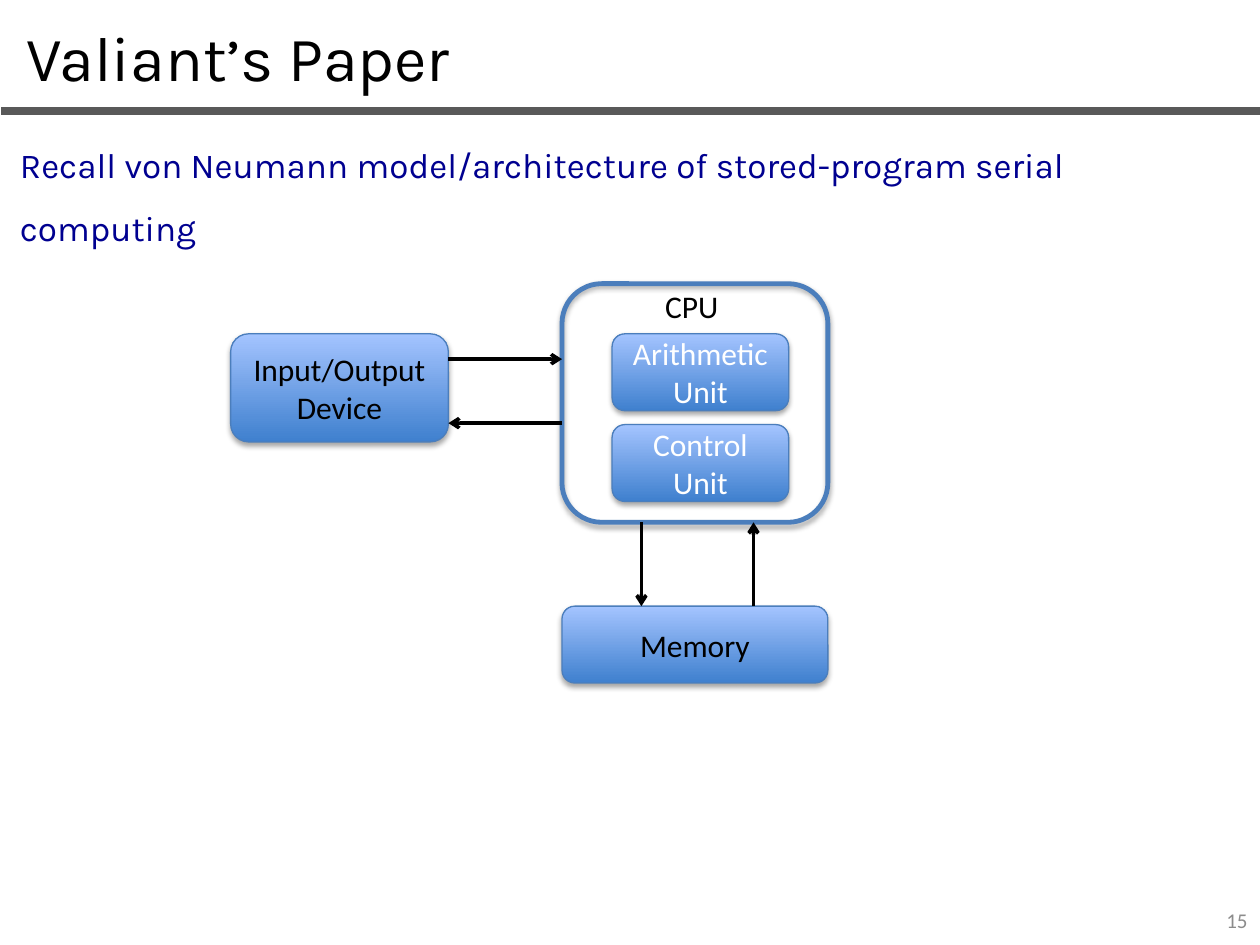
from pptx import Presentation
from pptx.dml.color import RGBColor
from pptx.enum.shapes import MSO_CONNECTOR, MSO_SHAPE
from pptx.enum.text import MSO_ANCHOR, PP_ALIGN
from pptx.oxml.ns import qn
from pptx.util import Cm, Pt
from lxml.etree import SubElement

COLORS = {
    "text": "000000",
    "light_text": "FFFFFF",
    "statement": "000090",
    "page_number": "8C8C8C",
    "rule": "595959",
    "outline": "4B7EBC",
    "gradient_bottom": "3F80CE",
    "gradient_top": "A4C4FF",
}


def color(name):
    return RGBColor.from_string(COLORS[name])


def write(text_frame, text, size, color_name, font="Calibri", align=PP_ALIGN.LEFT):
    text_frame.text = text
    paragraph = text_frame.paragraphs[0]
    paragraph.alignment = align
    run_font = paragraph.runs[0].font
    run_font.name = font
    run_font.size = Pt(size)
    run_font.color.rgb = color(color_name)
    return paragraph


def add_text(slide, box, text, size, color_name, wrap=True, anchor=MSO_ANCHOR.TOP, **style):
    text_frame = slide.shapes.add_textbox(*map(Cm, box)).text_frame
    text_frame.word_wrap = wrap
    text_frame.vertical_anchor = anchor
    return write(text_frame, text, size, color_name, **style)


def add_soft_shadow(shape):
    shape.shadow.inherit = False
    effects = shape._element.spPr.find(qn("a:effectLst"))
    shadow = SubElement(effects, qn("a:outerShdw"), blurRad=str(Pt(3.1)),
                        dist=str(Pt(1.8)), dir="5400000", rotWithShape="0")
    shadow_color = SubElement(shadow, qn("a:srgbClr"), val=COLORS["text"])
    SubElement(shadow_color, qn("a:alpha"), val="35000")


def add_rounded_box(slide, box, line_width):
    shape = slide.shapes.add_shape(MSO_SHAPE.ROUNDED_RECTANGLE, *map(Cm, box))
    shape.fill.background()
    shape.line.color.rgb = color("outline")
    shape.line.width = Pt(line_width)
    add_soft_shadow(shape)
    return shape


def add_unit(slide, box, label, color_name="text"):
    """Add a labelled box with the blue gradient."""
    shape = add_rounded_box(slide, box, 0.75)
    shape.fill.gradient()
    shape.fill.gradient_angle = 90
    for stop, name in zip(shape.fill.gradient_stops, ("gradient_bottom", "gradient_top")):
        stop.color.rgb = color(name)
    shape.text_frame.word_wrap = True
    shape.text_frame.vertical_anchor = MSO_ANCHOR.MIDDLE
    write(shape.text_frame, label, 18, color_name, align=PP_ALIGN.CENTER)


def add_line(slide, start, end, color_name, width):
    connector = slide.shapes.add_connector(
        MSO_CONNECTOR.STRAIGHT, *map(Cm, (*start, *end)))
    connector.line.color.rgb = color(color_name)
    connector.line.width = Pt(width)
    SubElement(connector._element.spPr, qn("a:effectLst"))
    return connector


def add_arrow(slide, start, end):
    connector = add_line(slide, start, end, "text", 2)
    outline = connector._element.spPr.find(qn("a:ln"))
    SubElement(outline, qn("a:tailEnd"), type="arrow")


def add_architecture(slide):
    cpu_left, cpu_top, cpu_width, cpu_height = 11.33, 5.72, 5.36, 4.81
    device_left, device_width = 4.65, 4.39
    unit_left, unit_width, unit_height = 12.34, 3.56, 1.55
    row_top, row_step = 6.73, 1.83
    memory_top = 12.22
    cpu_bottom = cpu_top + cpu_height
    device_right = device_left + device_width

    add_rounded_box(slide, (cpu_left, cpu_top, cpu_width, cpu_height), 2.75)
    add_text(slide, (13.16, 5.66, 1.6, 1.02), "CPU", 18, "text", wrap=False)
    for row, label in enumerate(("Arithmetic Unit", "Control Unit")):
        box = (unit_left, row_top + row * row_step, unit_width, unit_height)
        add_unit(slide, box, label, "light_text")
    add_unit(slide, (cpu_left, memory_top, cpu_width, unit_height), "Memory")
    add_unit(slide, (device_left, row_top, device_width, 2.18), "Input/Output Device")

    add_arrow(slide, (12.93, cpu_bottom), (12.93, memory_top))
    add_arrow(slide, (15.19, memory_top), (15.19, cpu_bottom))
    add_arrow(slide, (device_right, 7.24), (cpu_left, 7.24))
    add_arrow(slide, (cpu_left, 8.53), (device_right, 8.53))


def main():
    presentation = Presentation()
    presentation.slide_width = Cm(25.4)
    presentation.slide_height = Cm(19.05)
    slide = presentation.slides.add_slide(presentation.slide_layouts[6])

    add_line(slide, (0.03, 2.24), (25.43, 2.24), "rule", 4.5)
    add_text(slide, (0.28, 0.25, 25.04, 1.8), "Valiant’s Paper", 36, "text", font="Karla")
    add_text(slide, (19.48, 18.03, 5.92, 1.02), "15", 12, "page_number",
             anchor=MSO_ANCHOR.MIDDLE, align=PP_ALIGN.RIGHT)
    statement = add_text(
        slide, (0.15, 2.34, 25.17, 1.47),
        "Recall von Neumann model/architecture of stored-program serial computing",
        20, "statement", font="Karla")
    statement.line_spacing = 1.5
    add_architecture(slide)

    presentation.save("out.pptx")


if __name__ == "__main__":
    main()
